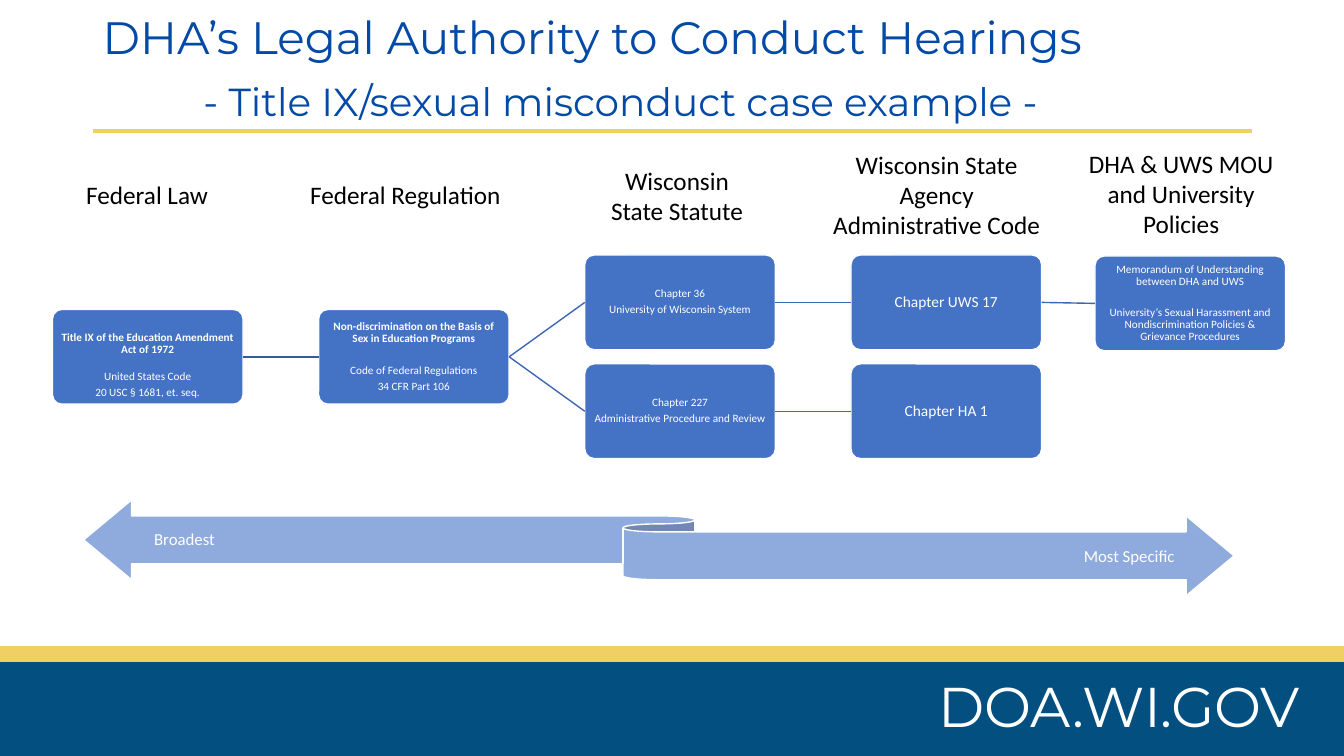
import pptx
import pptx.util
import pptx.dml.color
import pptx.enum.shapes
import pptx.enum.text
import pptx.oxml.ns
import lxml.etree

Inches = pptx.util.Inches
Pt = pptx.util.Pt
SHAPE = pptx.enum.shapes.MSO_SHAPE
ALIGN = pptx.enum.text.PP_ALIGN
ANCHOR = pptx.enum.text.MSO_ANCHOR

BLUE, WHITE, GOLD, NAVY = "4472C4", "FFFFFF", "F2CF63", "034F80"
TITLE_BLUE, RIBBON_BLUE, LINK, DARK_LINK = "034AA6", "8FAADC", "3E67B2", "365B9D"
BOX_W, BOX_H = 1.89, 0.94
COLUMN_X = [0.52, 3.16, 5.8, 8.44, 10.86]
UPPER_Y, MIDDLE_Y, LOWER_Y = 2.53, 3.07, 3.61

HEADINGS = [
    (0.36, 1.73, 2.2, 0.4, ["Federal Law"]),
    (2.92, 1.73, 2.2, 0.4, ["Federal Regulation"]),
    (5.4, 1.59, 2.63, 0.71, ["Wisconsin", "State Statute"]),
    (8.08, 1.43, 2.42, 1.01, ["Wisconsin State Agency Administrative Code"]),
    (10.5, 1.42, 2.43, 1.01, ["DHA & UWS MOU and University Policies"]),
]

# name: column, top, font size, extra top inset, (text, bold, space after)
AUTHORITIES = {
    "title_ix": (0, MIDDLE_Y, 8, 0.17, [
        ("Title IX of the Education Amendment Act of 1972", True, 10.5),
        ("United States Code", False, 2.8),
        ("20 USC § 1681, et. seq.", False, 0)]),
    "regulation": (1, MIDDLE_Y, 8, 0, [
        ("Non-discrimination on the Basis of Sex in Education Programs", True, 14),
        ("Code of Federal Regulations", False, 2.8),
        ("34 CFR Part 106", False, 0)]),
    "chapter_36": (2, UPPER_Y, 8, 0, [
        ("Chapter 36", False, 2.8),
        ("University of Wisconsin System", False, 0)]),
    "chapter_227": (2, LOWER_Y, 8, 0, [
        ("Chapter 227", False, 2.8),
        ("Administrative Procedure and Review", False, 0)]),
    "uws_17": (3, UPPER_Y, 11, 0, [("Chapter UWS 17", False, 0)]),
    "ha_1": (3, LOWER_Y, 11, 0, [("Chapter HA 1", False, 0)]),
    "policies": (4, UPPER_Y + 0.01, 8, 0, [
        ("Memorandum of Understanding between DHA and UWS", False, 14),
        ("University’s Sexual Harassment and Nondiscrimination Policies "
         "& Grievance Procedures", False, 0)]),
}

LINKS = [
    ("title_ix", "regulation", DARK_LINK),
    ("regulation", "chapter_36", LINK),
    ("chapter_36", "uws_17", LINK),
    ("uws_17", "policies", LINK),
    ("regulation", "chapter_227", LINK),
    ("chapter_227", "ha_1", LINK),
]


def rgb(value):
    """Turn a hex string into a colour."""
    return pptx.dml.color.RGBColor.from_string(value)


def add_block(slide, kind, x, y, w, h, fill, line=None):
    """Add a flat filled shape, outlined if a line colour is given."""
    sp = slide.shapes.add_shape(kind, Inches(x), Inches(y), Inches(w), Inches(h))
    sp.shadow.inherit = False
    sp.fill.solid()
    sp.fill.fore_color.rgb = rgb(fill)
    if line:
        sp.line.color.rgb = rgb(line)
        sp.line.width = Pt(1)
    else:
        sp.line.fill.background()
    return sp


def add_line(slide, start, end, color, width):
    """Add a straight connector without shadow."""
    cx = slide.shapes.add_connector(
        pptx.enum.shapes.MSO_CONNECTOR.STRAIGHT, *[Inches(v) for v in (*start, *end)])
    cx.line.color.rgb = rgb(color)
    cx.line.width = Pt(width)
    lxml.etree.SubElement(cx._element.spPr, pptx.oxml.ns.qn("a:effectLst"))
    return cx


def write(p, text, size, color, align, font="Calibri", bold=False, spacing=None):
    """Fill one paragraph and set its font."""
    p.text = text
    p.alignment = align
    if spacing:
        p.line_spacing = spacing
    p.font.size = Pt(size)
    p.font.name = font
    p.font.bold = bold
    p.font.color.rgb = rgb(color)


def add_text(slide, x, y, w, h, lines, size, color, align, font="Calibri",
             anchor=ANCHOR.TOP, side=0.1, spacing=None):
    """Add a wrapping text box with one paragraph per line."""
    tf = slide.shapes.add_textbox(Inches(x), Inches(y), Inches(w), Inches(h)).text_frame
    tf.word_wrap = True
    tf.vertical_anchor = anchor
    tf.margin_left = tf.margin_right = Inches(side)
    for i, text in enumerate(lines):
        p = tf.add_paragraph() if i else tf.paragraphs[0]
        write(p, text, size, color, align, font, spacing=spacing)
    return tf


def add_title(slide, x, y, w, h):
    """Place the two-line title with the rule beneath it."""
    add_line(slide, (x, y + 1.11), (x + 11.5, y + 1.11), GOLD, 3)
    tf = add_text(slide, x, y, w, h, ["DHA’s Legal Authority to Conduct Hearings"],
                  32.4, TITLE_BLUE, ALIGN.LEFT, "Montserrat", ANCHOR.MIDDLE, spacing=0.9)
    p = tf.add_paragraph()
    p._p.get_or_add_pPr().set("marL", str(Inches(1)))
    write(p, "- Title IX/sexual misconduct case example -", 27.9, TITLE_BLUE,
          ALIGN.LEFT, "Montserrat", spacing=0.9)
    p.space_before = Pt(12.8)


def add_footer(slide, x, y, w, h):
    """Place the gold and navy bands with the web address."""
    add_block(slide, SHAPE.RECTANGLE, x, y, w, h, GOLD)
    add_block(slide, SHAPE.RECTANGLE, x, y + 0.16, w, h - 0.16, NAVY)
    add_text(slide, x + 3.15, y + 0.2, 9.84, 0.77, ["DOA.WI.GOV"], 40, WHITE,
             ALIGN.RIGHT, "Montserrat")


def add_scale(slide, x, y, w, h):
    """Place the ribbon running from broadest to most specific."""
    add_block(slide, SHAPE.LEFT_RIGHT_RIBBON, x, y, w, h, RIBBON_BLUE, WHITE)
    for dx, dy, width, text, align in [
            (0.61, 0.17, 0.78, "Broadest", ALIGN.CENTER),
            (9.9, 0.34, 0.92, "Most Specific", ALIGN.RIGHT)]:
        add_text(slide, x + dx, y + dy, width, 0.46, [text], 12, WHITE, align,
                 anchor=ANCHOR.MIDDLE, side=0, spacing=0.9)


def add_authority(slide, x, y, size, top, lines):
    """Place one rounded box with its source of authority."""
    sp = add_block(slide, SHAPE.ROUNDED_RECTANGLE, x, y, BOX_W, BOX_H, BLUE, WHITE)
    sp.adjustments[0] = 0.1
    tf = sp.text_frame
    tf.word_wrap = True
    tf.vertical_anchor = ANCHOR.MIDDLE
    tf.margin_left = tf.margin_right = tf.margin_bottom = Inches(0.03)
    tf.margin_top = Inches(0.03 + top)
    for i, (text, bold, after) in enumerate(lines):
        p = tf.add_paragraph() if i else tf.paragraphs[0]
        write(p, text, size, WHITE, ALIGN.CENTER, bold=bold, spacing=0.9)
        p.space_after = Pt(after)
    return sp


def add_hierarchy(slide):
    """Place the headings, the boxes and the links between them."""
    for x, y, w, h, lines in HEADINGS:
        add_text(slide, x, y, w, h, lines, 18, "000000", ALIGN.CENTER)
    boxes = {name: add_authority(slide, COLUMN_X[column], *rest)
             for name, (column, *rest) in AUTHORITIES.items()}
    for source, target, color in LINKS:
        cx = add_line(slide, (0, 0), (1, 1), color, 1)
        cx.begin_connect(boxes[source], 3)
        cx.end_connect(boxes[target], 1)


def main():
    """Build the slide and save it."""
    prs = pptx.Presentation()
    prs.slide_width, prs.slide_height = Inches(13.33), Inches(7.5)
    slide = prs.slides.add_slide(prs.slide_layouts[6])
    add_footer(slide, 0, 6.41, 13.33, 1.09)
    add_title(slide, 0.92, 0.19, 11.53, 1.01)
    add_scale(slide, 0.83, 4.96, 11.41, 0.95)
    add_hierarchy(slide)
    prs.save("out.pptx")


if __name__ == "__main__":
    main()
